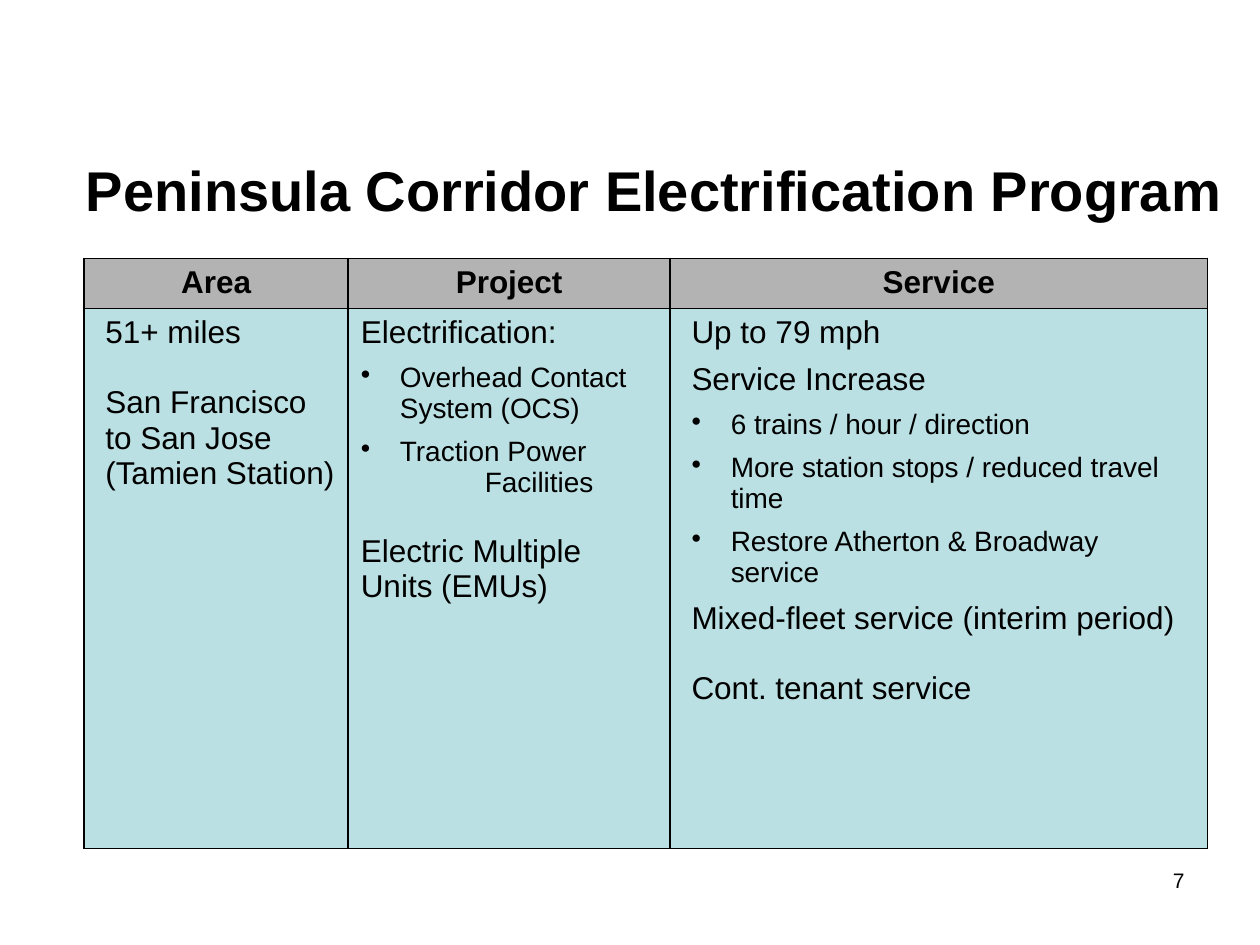
from lxml import etree
from pptx import Presentation
from pptx.dml.color import RGBColor
from pptx.enum.text import MSO_ANCHOR, PP_ALIGN
from pptx.oxml.ns import qn
from pptx.util import Pt

CENTER, LEFT, RIGHT = PP_ALIGN.CENTER, PP_ALIGN.LEFT, PP_ALIGN.RIGHT
TOP, MIDDLE = MSO_ANCHOR.TOP, MSO_ANCHOR.MIDDLE
INK = {"text": "000000", "head": "B3B3B3", "body": "BBE0E3", "line": "000000"}
HANG, STEP, GAP = 22.4, 6.8, 20

WIDTHS = [151, 184, 307]
HEIGHTS = [28, 308.5]
HEADS = ["Area", "Project", "Service"]
PAD = [5, 0, 5]
BODY = [
    [("plain", "51+ miles"),
     ("apart", "San Francisco to San Jose (Tamien Station)")],
    [("plain", "Electrification:"),
     ("bullet", "Overhead Contact System (OCS)"),
     ("bullet", "Traction Power"),
     ("inset", "Facilities"),
     ("apart", "Electric Multiple Units (EMUs)")],
    [("plain", "Up to 79 mph"),
     ("plain", "Service Increase"),
     ("bullet", "6 trains / hour / direction"),
     ("bullet", "More station stops / reduced travel time"),
     ("bullet", "Restore Atherton & Broadway service"),
     ("plain", "Mixed-fleet service (interim period)"),
     ("apart", "Cont. tenant service")],
]
KINDS = {
    "plain": {"size": 18, "before": STEP, "left": 0},
    "apart": {"size": 18, "before": GAP, "left": 0},
    "bullet": {"size": 16, "before": STEP, "left": HANG},
    "inset": {"size": 16, "before": 0, "left": HANG + 48.5},
}


def write(para, text, size, bold=False, align=LEFT):
    para.alignment = align
    run = para.add_run()
    run.text = text
    for key, value in {"name": "Arial", "size": Pt(size), "bold": bold}.items():
        setattr(run.font, key, value)
    run.font.color.rgb = RGBColor.from_string(INK["text"])


def indent(para, left, bullet):
    props = para._p.get_or_add_pPr()
    props.set("marL", str(Pt(left)))
    props.set("indent", str(Pt(-HANG if bullet else 0)))
    if bullet:
        etree.SubElement(props, qn("a:buChar"), char="•")
    else:
        etree.SubElement(props, qn("a:buNone"))


def border(cell):
    props = cell._tc.get_or_add_tcPr()
    for spot, side in enumerate(("a:lnL", "a:lnR", "a:lnT", "a:lnB")):
        line = etree.Element(qn(side), w=str(Pt(1)))
        fill = etree.SubElement(line, qn("a:solidFill"))
        etree.SubElement(fill, qn("a:srgbClr"), val=INK["line"])
        props.insert(spot, line)


def paint(cell, color):
    cell.fill.solid()
    cell.fill.fore_color.rgb = RGBColor.from_string(INK[color])
    border(cell)


def add_label(slide, box, text, size, bold, align, anchor):
    frame = slide.shapes.add_textbox(*map(Pt, box)).text_frame
    frame.word_wrap = True
    frame.vertical_anchor = anchor
    write(frame.paragraphs[0], text, size, bold, align)


def fill_body(cell, items, pad):
    frame = cell.text_frame
    for spot, (kind, text) in enumerate(items):
        para = frame.add_paragraph() if spot else frame.paragraphs[0]
        look = KINDS[kind]
        indent(para, pad + look["left"], kind == "bullet")
        para.space_before = Pt(look["before"] if spot else 0)
        write(para, text, look["size"])


def add_grid(slide, left, top):
    box = map(Pt, (left, top, sum(WIDTHS), sum(HEIGHTS)))
    grid = slide.shapes.add_table(len(HEIGHTS), len(WIDTHS), *box).table
    for row, height in zip(grid.rows, HEIGHTS):
        row.height = Pt(height)
    for col, width in enumerate(WIDTHS):
        grid.columns[col].width = Pt(width)
        head, body = grid.cell(0, col), grid.cell(1, col)
        paint(head, "head")
        paint(body, "body")
        write(head.text_frame.paragraphs[0], HEADS[col], 18, True, CENTER)
        fill_body(body, BODY[col], PAD[col])


def main():
    deck = Presentation()
    deck.slide_width, deck.slide_height = Pt(720), Pt(540)
    slide = deck.slides.add_slide(deck.slide_layouts[6])
    add_label(slide, (42, 78, 672, 60),
              "Peninsula Corridor Electrification Program", 32, True, LEFT, MIDDLE)
    add_grid(slide, 48, 147.6)
    add_label(slide, (516, 492, 168, 37.5), "7", 12, False, RIGHT, TOP)
    deck.save("out.pptx")


if __name__ == "__main__":
    main()
